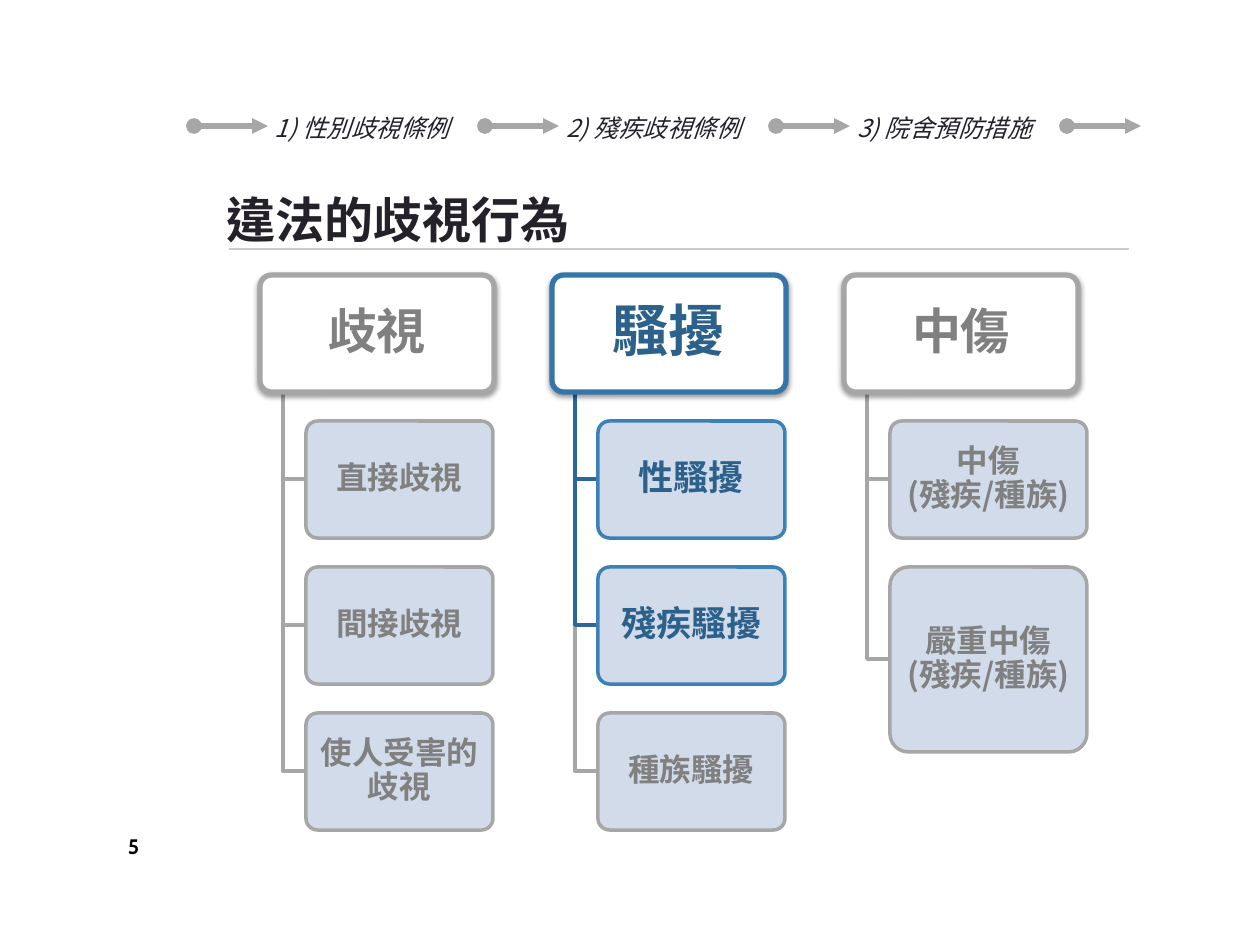
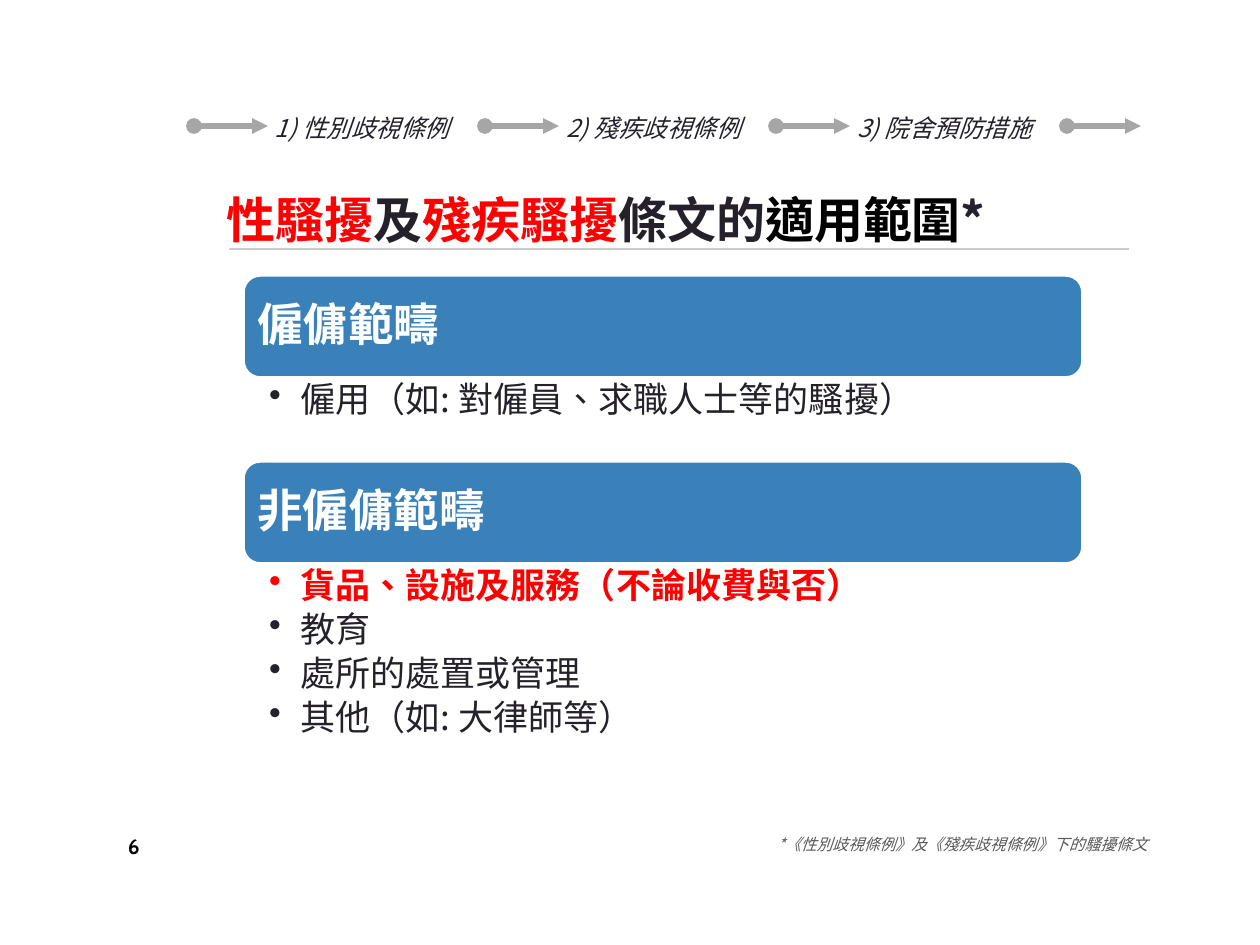
from lxml import etree
from pptx import Presentation
from pptx.dml.color import RGBColor
from pptx.enum.shapes import MSO_CONNECTOR, MSO_SHAPE
from pptx.enum.text import MSO_ANCHOR, MSO_AUTO_SIZE, PP_ALIGN
from pptx.oxml import parse_xml
from pptx.oxml.ns import qn
from pptx.util import Pt

LINE, ROUND = MSO_CONNECTOR.STRAIGHT, MSO_SHAPE.ROUNDED_RECTANGLE
LEFT, CENTER = PP_ALIGN.LEFT, PP_ALIGN.CENTER
TOP, MIDDLE, BOTTOM = MSO_ANCHOR.TOP, MSO_ANCHOR.MIDDLE, MSO_ANCHOR.BOTTOM
PX = 914400 / 126
FONT, BASE_FONT = "Noto Sans CJK SC", "Cabin"
COLORS = {
    "ink": "25212A", "black": "000000", "white": "FFFFFF", "red": "FF0000",
    "rule": "CCCCCC", "gray": "A6A6A6", "gray_text": "808080", "note": "595959",
    "blue": "3A81BA", "blue_head": "3575A9", "blue_branch": "2E6795",
    "blue_text": "2B618B", "leaf": "CED8E7",
}
RGB = {name: RGBColor.from_string(value) for name, value in COLORS.items()}
SHADOW = (
    '<a:outerShdw xmlns:a="http://schemas.openxmlformats.org/drawingml/2006/main" '
    'blurRad="39370" dist="20320" dir="5400000" rotWithShape="0">'
    '<a:srgbClr val="000000"><a:alpha val="38000"/></a:srgbClr></a:outerShdw>'
)


def px(*values):
    return [round(v * PX) for v in values]


def write(sp, text, insets, anchor, align, color, size, p=None, wrap=True,
          spacing=None, name=FONT, **font):
    """Format the frame of sp and add text to p, or to its first paragraph."""
    tf = sp.text_frame
    left, top, right, bottom = px(*insets)
    for key, value in {"margin_left": left, "margin_top": top, "margin_right": right,
                       "margin_bottom": bottom, "vertical_anchor": anchor,
                       "auto_size": MSO_AUTO_SIZE.NONE, "word_wrap": wrap}.items():
        setattr(tf, key, value)
    p = p or tf.paragraphs[0]
    p.alignment = align
    if spacing:
        p.line_spacing = spacing
    for i, line in enumerate(text.split("\n")):
        if i:
            p.add_line_break()
        r = p.add_run()
        r.text = line
        for key, value in {"name": name, "size": Pt(size), **font}.items():
            setattr(r.font, key, value)
        r.font.color.rgb = RGB[color]
        rPr = r._r.get_or_add_rPr()
        rPr.set("lang", "zh-TW")
        etree.SubElement(rPr, qn("a:ea")).set("typeface", BASE_FONT)


prs = Presentation()
prs.slide_width, prs.slide_height = px(1260, 945)

# Shared parts: title, rule, page number, progress trail
PAGES = [
    (5, [("違法的歧視行為", "ink")]),
    (6, [("性騷擾", "red"), ("及", "ink"), ("殘疾騷擾", "red"), ("條文的", "ink"),
         ("適用範圍", "black"), ("*", "ink")]),
]
TRAIL = [("1) 性別歧視條例", 253, 218), ("2) 殘疾歧視條例", 552, 203),
         ("3) 院舍預防措施", 843, 203)]
EVEN = (13, 13, 13, 13)
slides = []
for number, title in PAGES:
    s = prs.slides.add_slide(prs.slide_layouts[5])
    slides.append(s)
    sp = s.shapes.title
    sp.left, sp.top, sp.width, sp.height = px(214, 132, 912, 129)
    for text, color in title:
        write(sp, text, EVEN, BOTTOM, LEFT, color, 28, bold=True)

    lines = [(229, 249, 1129, "rule", 0.75)]
    lines += [(194 + 291 * i, 126, 268 + 291 * i, "gray", 3) for i in range(4)]
    for x1, y, x2, color, width in lines:
        c = s.shapes.add_connector(LINE, *px(x1, y, x2, y))
        c.line.color.rgb = RGB[color]
        c.line.width = Pt(width)
        etree.SubElement(c._element.spPr, qn("a:effectLst"))
        if color == "gray":
            ln = c.line._get_or_add_ln()
            etree.SubElement(ln, qn("a:headEnd")).set("type", "oval")
            etree.SubElement(ln, qn("a:tailEnd")).set("type", "triangle")

    for text, x, w in TRAIL:
        sp = s.shapes.add_textbox(*px(x, 106, w, 43))
        write(sp, text, EVEN, MIDDLE, CENTER, "ink", 14, italic=True)
    sp = s.shapes.add_textbox(*px(115, 810, 76, 72))
    write(sp, str(number), EVEN, MIDDLE, LEFT, "black", 12, name=BASE_FONT, bold=True)

tree_slide, scope_slide = slides

# Slide 5: three trees; each leaf is (text, height, highlighted)
TREES = [
    ("歧視", False, 187, [("直接歧視", 117, False), ("間接歧視", 117, False),
                        ("使人受害的歧視", 117, False)]),
    ("騷擾", True, 187, [("性騷擾", 117, True), ("殘疾騷擾", 117, True),
                       ("種族騷擾", 117, False)]),
    ("中傷", False, 197, [("中傷\n(殘疾/種族)", 117, False),
                        ("嚴重中傷\n(殘疾/種族)", 185, False)]),
]
shapes = tree_slide.shapes
for col, (head, head_on, leaf_w, leaves) in enumerate(TREES):
    x = 260 + 292 * col
    boxes = [(head, x, 275, 234, 117, head_on, True)]
    boxes += [(text, x + 46, 421 + 146 * i, leaf_w, h, on, False)
              for i, (text, h, on) in enumerate(leaves)]

    # Branches run from the lowest leaf up, so highlighted ones lie on top
    for text, left, top, w, h, on, is_head in reversed(boxes[1:]):
        mid = top + h // 2
        trunk, start, end, joint = px(x + 23, 391, left, mid)
        fb = shapes.build_freeform(trunk, start)
        fb.add_line_segments([(trunk, joint), (end, joint)], close=False)
        sp = fb.convert_to_shape()
        sp.shadow.inherit = False
        sp.fill.background()
        sp.line.color.rgb = RGB["blue_branch" if on else "gray"]
        sp.line.width = Pt(2)

    for text, left, top, w, h, on, is_head in boxes:
        sp = shapes.add_shape(ROUND, *px(left, top, w, h))
        sp.adjustments[0] = 0.1
        sp.shadow.inherit = False
        sp.fill.solid()
        sp.fill.fore_color.rgb = RGB["white" if is_head else "leaf"]
        edge = "blue_head" if is_head else "blue"
        sp.line.color.rgb = RGB[edge if on else "gray"]
        sp.line.width = Pt(3 if is_head else 2)
        if is_head:
            sp._element.spPr.find(qn("a:effectLst")).append(parse_xml(SHADOW))
        else:
            clr = sp._element.spPr.find(qn("a:solidFill"))[0]
            etree.SubElement(clr, qn("a:alpha")).set("val", "90000")
        size = (32 if on else 28) if is_head else (20 if on else 18)
        write(sp, text, (2, 1, 2, 1), MIDDLE, CENTER,
              "blue_text" if on else "gray_text", size, spacing=0.9, bold=True)

# Slide 6: scope bars, each with its bullet list
SCOPES = [
    ("僱傭範疇", 275, 83, [("僱用（如: 對僱員、求職人士等的騷擾）", False)]),
    ("非僱傭範疇", 461, 255, [("貨品、設施及服務（不論收費與否）", True), ("教育", False),
                           ("處所的處置或管理", False), ("其他（如: 大律師等）", False)]),
]
shapes = scope_slide.shapes
for head, top, list_h, items in SCOPES:
    sp = shapes.add_shape(ROUND, *px(243, top, 840, 103))
    sp.shadow.inherit = False
    sp.fill.solid()
    sp.fill.fore_color.rgb = RGB["blue"]
    sp.line.color.rgb = RGB["white"]
    sp.line.width = Pt(2)
    write(sp, head, (9, 9, 9, 9), MIDDLE, LEFT, "white", 26, spacing=0.9, bold=True)

    sp = shapes.add_textbox(*px(243, top + 103, 840, list_h))
    tf = sp.text_frame
    for i, (text, strong) in enumerate(items):
        p = tf.add_paragraph() if i else tf.paragraphs[0]
        p.level = 1
        p.space_after = Pt(3.6)
        write(sp, text, (26, 4, 20, 4), TOP, LEFT, "red" if strong else "ink", 20,
              p=p, spacing=0.9, bold=strong)
        pPr = p._p.get_or_add_pPr()
        pPr.set("marL", "228600")
        pPr.set("indent", "-228600")
        etree.SubElement(pPr, qn("a:buChar")).set("char", "•")

sp = shapes.add_textbox(*px(759, 829, 407, 32))
write(sp, "*《性別歧視條例》及《殘疾歧視條例》下的騷擾條文", (13, 6, 13, 6), TOP, CENTER,
      "note", 9, wrap=False, italic=True)

prs.save("out.pptx")
